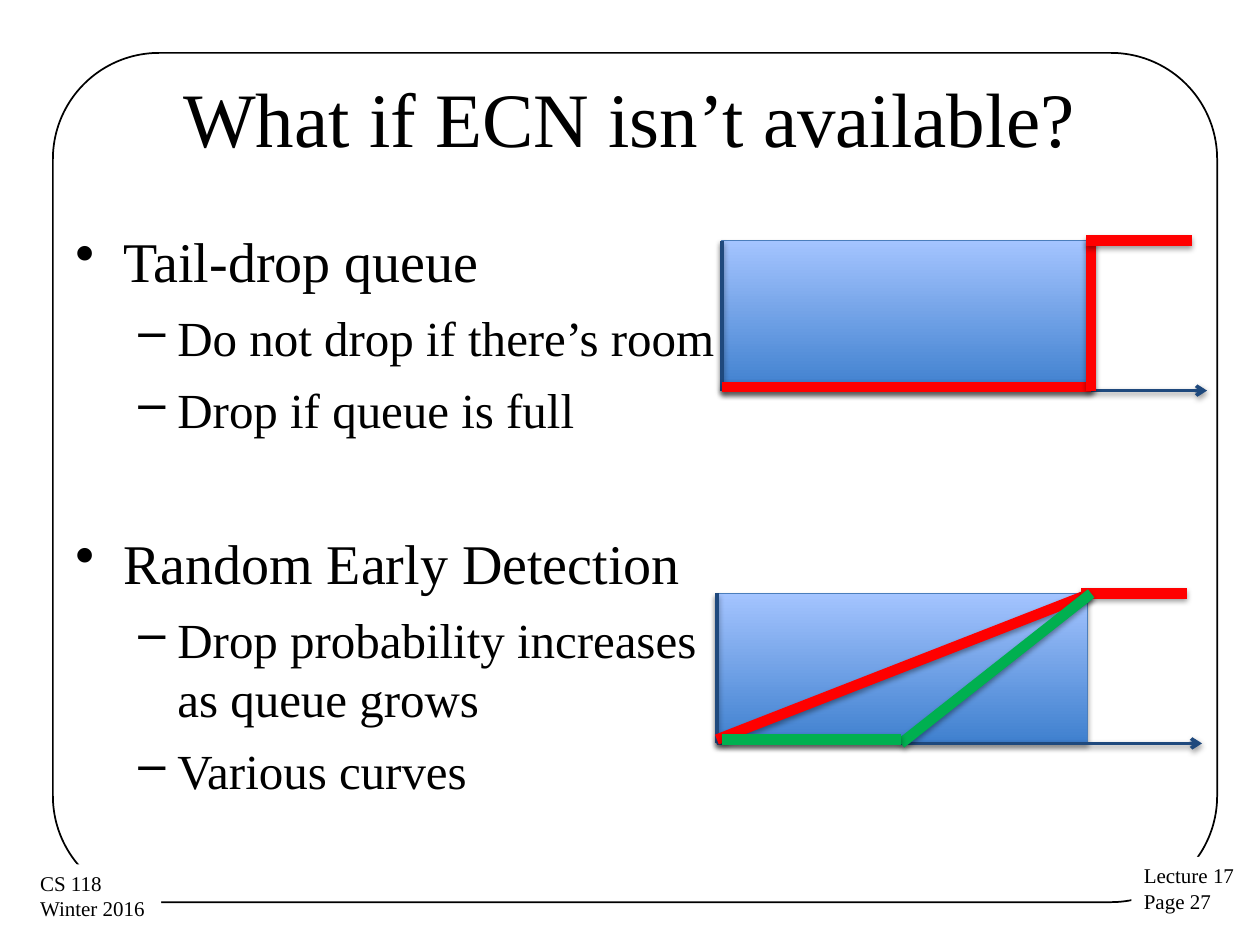
import lxml.etree
import pptx
import pptx.dml.color
import pptx.enum.shapes
import pptx.enum.text
import pptx.oxml.ns
import pptx.util

PX = 9144  # 100 px to the inch
FONT = "Times New Roman"
COLORS = {
    "ink": "000000", "paper": "FFFFFF", "axis": "1F497D",
    "red": "FF0000", "green": "00B050",
    "queue_low": "3F80CE", "queue_high": "A4C4FF", "queue_edge": "4B7EBC",
}
BULLETS = [
    # level, lines, space before in points
    (0, ["Tail-drop queue"], 4),
    (1, ["Do not drop if there’s room"], 7.5),
    (1, ["Drop if queue is full"], 7.5),
    (0, ["Random Early Detection"], 52),
    (1, ["Drop probability increases", "as queue grows"], 7.5),
    (1, ["Various curves"], 7.5),
]
LEVELS = [
    {"mark": "•", "margin": 38, "indent": -38, "size": 32},
    {"mark": "–", "margin": 81, "indent": -31, "size": 28},
]
# Curves: colour, start and end, relative to the queue's box
TAIL_DROP_CURVES = [
    ("red", (0, 116), (293, 116)),
    ("red", (293, 0), (293, 119)),
    ("red", (289, 0), (373, 0)),
]
EARLY_DETECTION_CURVES = [
    ("red", (0, 116), (297, 0)),
    ("red", (289, 0), (373, 0)),
    ("green", (146, 119), (297, 0)),
    ("green", (4, 116), (146, 116)),
]


def rgb(name):
    return pptx.dml.color.RGBColor.from_string(COLORS[name])


def emu(*lengths):
    return [length * PX for length in lengths]


def add_xml(parent, tag, **attributes):
    return lxml.etree.SubElement(parent, pptx.oxml.ns.qn(tag), attributes)


def add_span(para, text, size):
    span = para.add_run()
    span.text = text
    span.font.name = FONT
    span.font.size = pptx.util.Pt(size)
    span.font.color.rgb = rgb("ink")


def add_shadow(item, alpha, distance):
    """Give a shape or line a soft black shadow straight below it."""
    effects = add_xml(item._element.spPr, "a:effectLst")
    shadow = add_xml(effects, "a:outerShdw", blurRad=str(pptx.util.Pt(3.1)),
                     dist=str(pptx.util.Pt(distance)), dir="5400000", rotWithShape="0")
    color = add_xml(shadow, "a:srgbClr", val=COLORS["ink"])
    add_xml(color, "a:alpha", val=str(alpha * 1000))


def add_line(page, box, color, width, start, end):
    left, top = box[:2]
    line = page.shapes.add_connector(
        pptx.enum.shapes.MSO_CONNECTOR.STRAIGHT,
        *emu(left + start[0], top + start[1], left + end[0], top + end[1]))
    line.line.color.rgb = rgb(color)
    line.line.width = pptx.util.Pt(width)
    add_shadow(line, 38, 1.6)
    return line


def add_frame(page, box):
    frame = page.shapes.add_shape(
        pptx.enum.shapes.MSO_SHAPE.ROUNDED_RECTANGLE, *emu(*box))
    frame.adjustments[0] = 0.125
    frame.fill.background()
    frame.line.color.rgb = rgb("ink")
    frame.line.width = pptx.util.Pt(1)
    frame.shadow.inherit = False


def add_corner_label(page, box, lines):
    label = page.shapes.add_textbox(*emu(*box))
    label.fill.solid()
    label.fill.fore_color.rgb = rgb("paper")
    label.text_frame.word_wrap = False
    for index, text in enumerate(lines):
        para = label.text_frame.add_paragraph() if index else label.text_frame.paragraphs[0]
        add_span(para, text, 12)


def add_title(page, box, text):
    title = page.shapes.add_textbox(*emu(*box)).text_frame
    title.word_wrap = True
    title.vertical_anchor = pptx.enum.text.MSO_ANCHOR.MIDDLE
    para = title.paragraphs[0]
    para.alignment = pptx.enum.text.PP_ALIGN.CENTER
    add_span(para, text, 44)


def add_bullets(page, box, bullets):
    body = page.shapes.add_textbox(*emu(*box)).text_frame
    body.word_wrap = True
    for index, (level, lines, space) in enumerate(bullets):
        style = LEVELS[level]
        para = body.add_paragraph() if index else body.paragraphs[0]
        para.level = level
        para.space_before = pptx.util.Pt(space)
        properties = para._p.get_or_add_pPr()
        properties.set("marL", str(style["margin"] * PX))
        properties.set("indent", str(style["indent"] * PX))
        add_xml(properties, "a:buChar", char=style["mark"])
        for number, text in enumerate(lines):
            if number:
                para.add_line_break()
            add_span(para, text, style["size"])


def add_queue_plot(page, box, curves):
    """Draw a queue with its axes and the drop curves over it."""
    height = box[3]
    queue = page.shapes.add_shape(pptx.enum.shapes.MSO_SHAPE.RECTANGLE, *emu(*box))
    queue.fill.gradient()
    queue.fill.gradient_angle = 90
    for stop, color in zip(queue.fill.gradient_stops, ("queue_low", "queue_high")):
        stop.color.rgb = rgb(color)
    queue.line.color.rgb = rgb("queue_edge")
    queue.line.width = pptx.util.Pt(0.75)
    add_shadow(queue, 35, 1.8)

    add_line(page, box, "axis", 2, (0, 0), (0, height))
    length_axis = add_line(page, box, "axis", 2, (385, height), (0, height))
    add_xml(length_axis.line._get_or_add_ln(), "a:headEnd", type="arrow")
    for color, start, end in curves:
        add_line(page, box, color, 6, start, end)


def main():
    deck = pptx.Presentation()
    deck.slide_width, deck.slide_height = emu(1000, 750)
    page = deck.slides.add_slide(deck.slide_layouts[6])

    add_frame(page, (42, 42, 924, 674))
    add_corner_label(page, (898, 680, 93, 51), ["Lecture 17", "Page 27"])
    add_corner_label(page, (22, 686, 106, 51), ["CS 118", "Winter 2016"])
    add_title(page, (50, 30, 900, 125), "What if ECN isn’t available?")
    add_bullets(page, (50, 175, 900, 495), BULLETS)
    add_queue_plot(page, (573, 191, 294, 119), TAIL_DROP_CURVES)
    add_queue_plot(page, (569, 471, 294, 119), EARLY_DETECTION_CURVES)

    deck.save("out.pptx")


if __name__ == "__main__":
    main()
